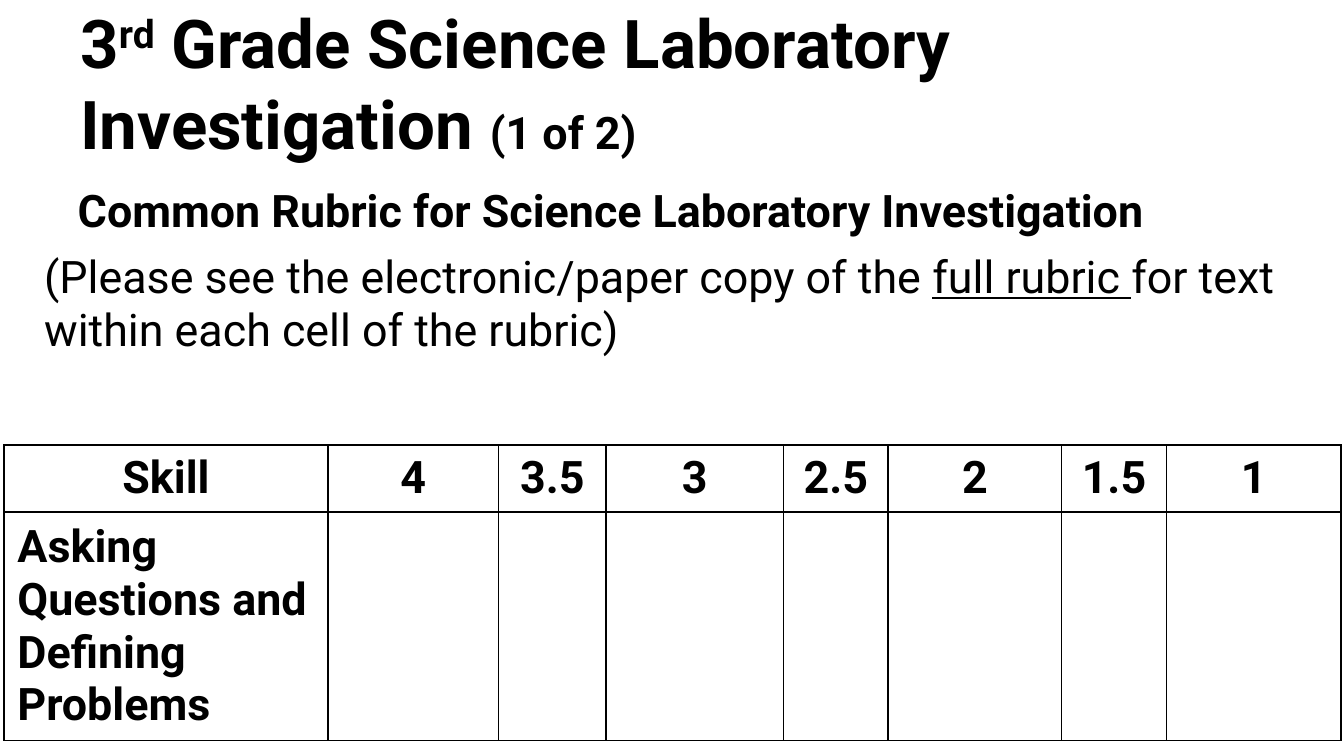
from dataclasses import dataclass

from lxml import etree
from pptx import Presentation
from pptx.dml.color import RGBColor
from pptx.enum.text import MSO_ANCHOR, PP_ALIGN
from pptx.oxml.ns import qn
from pptx.util import Inches, Pt

MIDDLE, TOP = MSO_ANCHOR.MIDDLE, MSO_ANCHOR.TOP
CENTER, LEFT = PP_ALIGN.CENTER, PP_ALIGN.LEFT
COLORS = {"ink": "000000"}
FONT = "Roboto"
WIDTHS = [2.41, 1.27, 0.8, 1.32, 0.78, 1.29, 0.78, 1.3]
HEIGHT = 0.41
HEADS = ["Skill", "4", "3.5", "3", "2.5", "2", "1.5", "1"]
SKILL = "Asking Questions and Defining Problems"


@dataclass
class Piece:
    text: str
    size: float = 24
    bold: bool = True
    under: bool = False
    raised: bool = False


TITLE = [
    Piece("3", 36),
    Piece("rd", 36, raised=True),
    Piece(" Grade Science Laboratory Investigation ", 36),
    Piece("(1 of 2)"),
]
BODY = [
    [Piece("Common Rubric for Science Laboratory Investigation")],
    [
        Piece("(Please see the electronic/paper copy of the ", bold=False),
        Piece("full rubric ", bold=False, under=True),
        Piece("for text within each cell of the rubric)", bold=False),
    ],
]


def style(run, piece: Piece) -> None:
    font = run.font
    font.name, font.size = FONT, Pt(piece.size)
    font.bold, font.underline = piece.bold, piece.under
    font.color.rgb = RGBColor.from_string(COLORS["ink"])
    if piece.raised:
        run._r.get_or_add_rPr().set("baseline", "30000")


def write(para, pieces: list[Piece]) -> None:
    for piece in pieces:
        run = para.add_run()
        run.text = piece.text
        style(run, piece)


def add_box(slide, left: float, top: float, width: float, height: float, anchor):
    box = slide.shapes.add_textbox(Inches(left), Inches(top), Inches(width), Inches(height))
    frame = box.text_frame
    frame.word_wrap, frame.vertical_anchor = True, anchor
    return frame


def add_title(slide) -> None:
    frame = add_box(slide, 0.5, 0.44, 9, 0.94, MIDDLE)
    frame.margin_bottom = Inches(0.65)
    write(frame.paragraphs[0], TITLE)


def add_body(slide) -> None:
    frame = add_box(slide, 0.23, 1.31, 9.52, 3.71, TOP)
    paras = [frame.paragraphs[0], frame.add_paragraph()]
    for para, pieces in zip(paras, BODY):
        para.space_before = Pt(6.4)
        write(para, pieces)
    props = paras[0]._p.get_or_add_pPr()
    props.set("marL", str(Inches(0.5)))
    props.set("indent", str(Inches(-0.25)))


def add_edges(cell) -> None:
    props = cell._tc.get_or_add_tcPr()
    for place, side in enumerate(("lnL", "lnR", "lnT", "lnB")):
        line = etree.Element(qn(f"a:{side}"), w=str(Pt(1)))
        fill = etree.SubElement(line, qn("a:solidFill"))
        etree.SubElement(fill, qn("a:srgbClr"), val=COLORS["ink"])
        props.insert(place, line)


def fill_cell(cell, text: str, align) -> None:
    cell.fill.background()
    add_edges(cell)
    cell.vertical_anchor = MIDDLE
    para = cell.text_frame.paragraphs[0]
    para.alignment = align
    if text:
        write(para, [Piece(text)])


def add_rubric(slide) -> None:
    rows = [HEADS, [SKILL] + [""] * (len(HEADS) - 1)]
    frame = slide.shapes.add_table(
        len(rows), len(HEADS), Inches(0.03), Inches(3.31), Inches(9.94), Inches(2.2)
    )
    table = frame.table
    table.first_row = table.horz_banding = False
    for column, width in zip(table.columns, WIDTHS):
        column.width = Inches(width)
    for row, texts, align in zip(table.rows, rows, (CENTER, LEFT)):
        row.height = Inches(HEIGHT)
        for cell, text in zip(row.cells, texts):
            fill_cell(cell, text, align)
    frame.width, frame.height = Inches(9.94), Inches(2.2)


def main() -> None:
    """Build the science rubric slide."""
    deck = Presentation()
    deck.slide_width = Inches(10)
    deck.slide_height = deck.slide_width * 9 // 16
    slide = deck.slides.add_slide(deck.slide_layouts[6])
    add_title(slide)
    add_body(slide)
    add_rubric(slide)
    deck.save("out.pptx")


if __name__ == "__main__":
    main()
